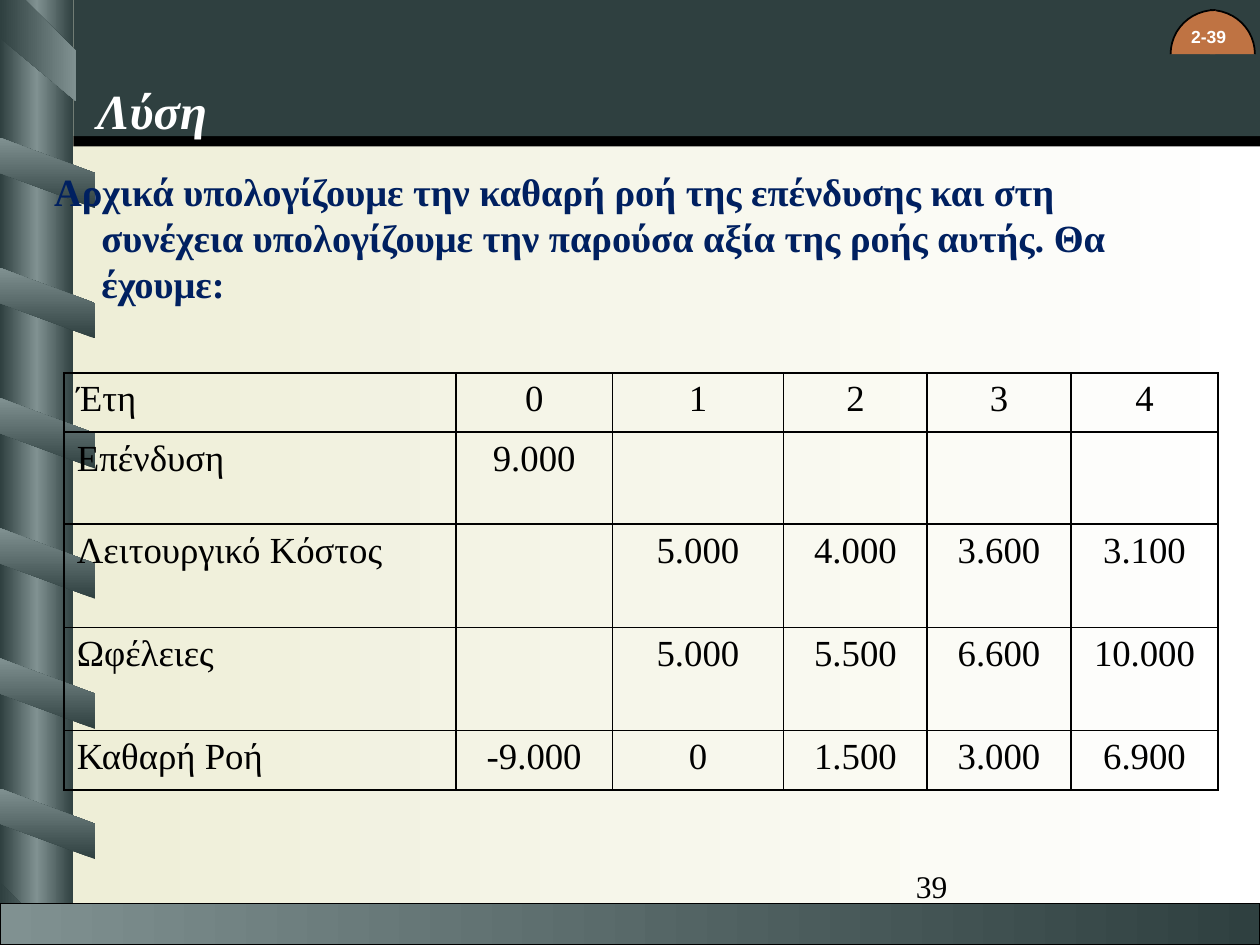
from dataclasses import dataclass

from lxml.etree import SubElement
from pptx import Presentation
from pptx.enum.shapes import MSO_SHAPE
from pptx.enum.text import MSO_ANCHOR, MSO_AUTO_SIZE, PP_ALIGN
from pptx.dml.color import RGBColor
from pptx.oxml.ns import qn
from pptx.util import Inches, Pt

COLUMNS, ROWS = 100, 75
CELL = Inches(10) // COLUMNS
COLORS = {
    "dark": "2F4040", "light": "809191", "cream": "EDEDD5", "white": "FFFFFF",
    "black": "000000", "badge": "BF7343", "navy": "002060",
}
SERIF, SANS = "Times New Roman", "Arial"
HANGING = 3.75


@dataclass(frozen=True)
class Area:
    col: float
    row: float
    cols: float
    rows: float

    def emu(self) -> tuple:
        return tuple(units(n) for n in (self.col, self.row, self.cols, self.rows))


@dataclass(frozen=True)
class Panel:
    area: Area
    colors: tuple
    kind: MSO_SHAPE = MSO_SHAPE.RECTANGLE
    outlined: bool = False
    rotation: float = 0
    flipped: bool = False
    slant: float | None = None


def units(count: float) -> int:
    return round(count * CELL)


def rgb(name: str) -> RGBColor:
    return RGBColor.from_string(COLORS[name])


def paint(fill, owner, colors: tuple) -> None:
    if len(colors) == 1:
        fill.solid()
        fill.fore_color.rgb = rgb(colors[0])
        return
    fill.gradient()
    fill.gradient_angle = 0
    stops = owner.find(".//" + qn("a:gsLst"))
    for stop in list(stops):
        stops.remove(stop)
    for index, name in enumerate(colors):
        position = str(100000 * index // (len(colors) - 1))
        stop = SubElement(stops, qn("a:gs"), pos=position)
        SubElement(stop, qn("a:srgbClr"), val=COLORS[name])


def finish(shape, colors: tuple, outlined: bool = False) -> None:
    shape.shadow.inherit = False
    paint(shape.fill, shape.element, colors)
    if outlined:
        shape.line.color.rgb = rgb("black")
        shape.line.width = Pt(1)
    else:
        shape.line.fill.background()


def draw_panel(slide, panel: Panel) -> None:
    shape = slide.shapes.add_shape(panel.kind, *panel.area.emu())
    finish(shape, panel.colors, panel.outlined)
    shape.rotation = panel.rotation
    if panel.slant is not None:
        shape.adjustments[0] = panel.slant
    if panel.flipped:
        shape.element.find(".//" + qn("a:xfrm")).set("flipV", "1")


def draw_ribbon_end(slide, points: list) -> None:
    builder = slide.shapes.build_freeform(*points[0], scale=CELL)
    builder.add_line_segments(points[1:], close=True)
    finish(builder.convert_to_shape(), ("dark", "light"))


def write(frame, text: str, *, size: float, color: str, font: str = SERIF,
          bold: bool = False, italic: bool = False,
          align: PP_ALIGN = PP_ALIGN.LEFT, hanging: float = 0) -> None:
    paragraph = frame.paragraphs[0]
    paragraph.alignment = align
    properties = paragraph._p.get_or_add_pPr()
    properties.set("marL", str(units(hanging)))
    properties.set("indent", str(-units(hanging)))
    SubElement(properties, qn("a:buNone"))
    run = paragraph.add_run()
    run.text = text
    run.font.name, run.font.size = font, Pt(size)
    run.font.bold, run.font.italic = bold, italic
    run.font.color.rgb = rgb(color)


def place(holder, area: Area, anchor: MSO_ANCHOR, wrap: bool = True):
    holder.left, holder.top, holder.width, holder.height = area.emu()
    frame = holder.text_frame
    frame.auto_size = MSO_AUTO_SIZE.NONE
    frame.word_wrap = wrap
    frame.vertical_anchor = anchor
    return frame


def add_label(slide, area: Area, anchor: MSO_ANCHOR, wrap: bool):
    return place(slide.shapes.add_textbox(*area.emu()), area, anchor, wrap)


def draw_borders(cell) -> None:
    properties = cell._tc.get_or_add_tcPr()
    for side in ("lnL", "lnR", "lnT", "lnB"):
        border = SubElement(properties, qn(f"a:{side}"), w=str(Pt(1)))
        fill = SubElement(border, qn("a:solidFill"))
        SubElement(fill, qn("a:srgbClr"), val=COLORS["black"])


def draw_table(slide, area: Area, widths: list, heights: list, rows: list) -> None:
    table = slide.shapes.add_table(len(rows), len(widths), *area.emu()).table
    table.first_row = table.horz_banding = False
    for column, width in zip(table.columns, widths):
        column.width = units(width)
    for row, height in zip(table.rows, heights):
        row.height = units(height)
    for r, values in enumerate(rows):
        for c, value in enumerate(values):
            cell = table.cell(r, c)
            draw_borders(cell)
            cell.fill.background()
            if value:
                write(cell.text_frame, value, size=21, color="black", hanging=HANGING,
                      align=PP_ALIGN.CENTER if c else PP_ALIGN.JUSTIFY)


PILLAR = 5.83
HEADER = 10.8
BAND_STEP = 10.33
FRAME = [
    Panel(Area(PILLAR, HEADER, COLUMNS - PILLAR, 0.83), ("black",)),
    Panel(Area(0, 0, PILLAR, ROWS), ("dark", "light", "dark")),
    Panel(Area(PILLAR, 0, COLUMNS - PILLAR, HEADER), ("dark",)),
]
BANDS = [
    Panel(Area(0.97, 9.96 + BAND_STEP * n, 5.6, 7.54), ("dark", "light"),
          MSO_SHAPE.PARALLELOGRAM, rotation=270, slant=0.5)
    for n in range(6)
]
RIBBON_ENDS = [
    [(0, 0), (0, 2.9), (PILLAR, 8.1), (PILLAR, 3.5), (1.9, 0)],
    [(5, 74.9), (0, 70.5), (0, 75)],
]
FOOTER_AND_BADGE = [
    Panel(Area(0, 71.7, COLUMNS, 3.3), ("light", "dark"), outlined=True),
    Panel(Area(92.5, 0.8, 7.1, 7), ("badge",), MSO_SHAPE.ARC, True),
    Panel(Area(92.9, 0.8, 7.1, 7), ("badge",), MSO_SHAPE.ARC, True, 180, True),
]
INTRO = ("Αρχικά υπολογίζουμε την καθαρή ροή της επένδυσης και στη συνέχεια "
         "υπολογίζουμε την παρούσα αξία της ροής αυτής. Θα έχουμε:")
CASH_FLOWS = [
    ["Έτη", "0", "1", "2", "3", "4"],
    ["Επένδυση", "9.000", "", "", "", ""],
    ["Λειτουργικό Κόστος", "", "5.000", "4.000", "3.600", "3.100"],
    ["Ωφέλειες", "", "5.000", "5.500", "6.600", "10.000"],
    ["Καθαρή Ροή", "-9.000", "0", "1.500", "3.000", "6.900"],
]


def main() -> None:
    deck = Presentation()
    deck.slide_width, deck.slide_height = units(COLUMNS), units(ROWS)
    slide = deck.slides.add_slide(deck.slide_layouts[1])
    paint(slide.background.fill, slide.element, ("cream", "white"))

    for panel in FRAME + BANDS:
        draw_panel(slide, panel)
    for points in RIBBON_ENDS:
        draw_ribbon_end(slide, points)
    for panel in FOOTER_AND_BADGE:
        draw_panel(slide, panel)

    badge = add_label(slide, Area(93.3, 0.8, 5, 4.2), MSO_ANCHOR.MIDDLE, False)
    write(badge, "2-39", size=10, color="white", font=SANS, bold=True,
          align=PP_ALIGN.RIGHT)

    title, body = slide.shapes.title, slide.placeholders[1]
    for holder in (title, body):
        slide.shapes._spTree.append(holder.element)
    heading = place(title, Area(6.7, 2.5, 88.3, 12.5), MSO_ANCHOR.MIDDLE)
    write(heading, "Λύση", size=28, color="white", bold=True, italic=True)
    intro = place(body, Area(3.3, 12.8, 93.2, 16.1), MSO_ANCHOR.TOP)
    write(intro, INTRO, size=22, color="navy", bold=True, hanging=HANGING)

    draw_table(slide, Area(5.1, 29.6, 91.6, 33.1),
               [31.1, 12.4, 13.6, 11.4, 11.4, 11.7], [4.7, 7.3, 8.2, 8.2, 4.7],
               CASH_FLOWS)
    page = add_label(slide, Area(71.7, 68.3, 23.3, 5.2), MSO_ANCHOR.TOP, True)
    write(page, "39", size=18, color="black")
    deck.save("out.pptx")


if __name__ == "__main__":
    main()
